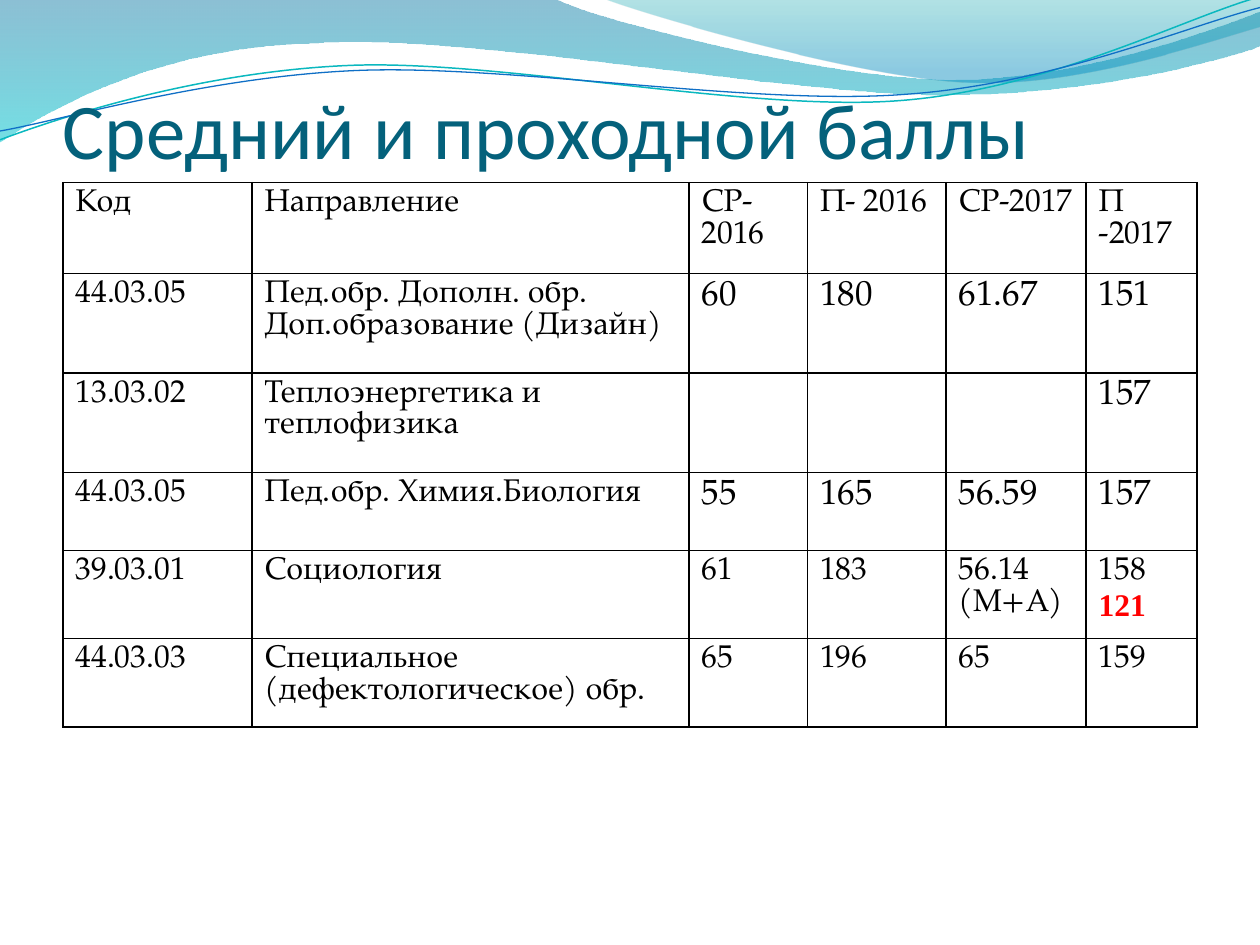
from lxml.etree import SubElement
from pptx import Presentation
from pptx.dml.color import RGBColor
from pptx.enum.text import MSO_ANCHOR
from pptx.oxml.ns import qn
from pptx.util import Inches, Pt

BLACK = RGBColor(0x00, 0x00, 0x00)
RED = RGBColor(0xFF, 0x00, 0x00)
TITLE_TEAL = RGBColor(0x04, 0x61, 0x7B)
DEEP_BLUE = RGBColor(0x00, 0x74, 0xA1)
AQUA = RGBColor(0x00, 0xC6, 0xCF)
SEA_GREEN = RGBColor(0x00, 0xA1, 0xA9)
SKY_BLUE = RGBColor(0x00, 0x8B, 0xBF)
LINE_TEAL = RGBColor(0x0A, 0xB8, 0xBF)
LINE_BLUE = RGBColor(0x0F, 0x6F, 0xC6)

TITLE = "Средний и проходной баллы"
TITLE_FONT, TABLE_FONT, ACCENT_FONT = "Calibri", "TeX Gyre Pagella", "Times New Roman"
HIGHLIGHT = "121"

ROWS = [
    ["Код", "Направление", "СР- 2016", "П- 2016", "СР-2017", "П -2017"],
    ["44.03.05", "Пед.обр. Дополн. обр. Доп.образование (Дизайн)", "60", "180", "61.67", "151"],
    ["13.03.02", "Теплоэнергетика и теплофизика", "", "", "", "157"],
    ["44.03.05", "Пед.обр. Химия.Биология", "55", "165", "56.59", "157"],
    ["39.03.01", "Социология", "61", "183", "56.14\n(М+А)", "158\n" + HIGHLIGHT],
    ["44.03.03", "Специальное (дефектологическое) обр.", "65", "196", "65", "159"],
]
COLUMN_WIDTHS = [1.5, 3.47, 0.94, 1.1, 1.11, 0.88]
ROW_HEIGHTS = [0.72, 0.79, 0.79, 0.62, 0.63, 0.61]
LARGE_SCORE_ROWS = range(1, 4)

BANDS = [
    ([(0, 0), (4.4, -0.01), (4.76, 0.17, 6.64, 0.63, 7.58, 0.63),
      (8.53, 0.63, 9.58, 0.26, 10, 0.09), (10.01, 0.36),
      (9.83, 0.44, 8.7, 0.76, 7.46, 0.75), (6.22, 0.75, 3.82, 0.28, 2.57, 0.34),
      (1.29, 0.36, 0.46, 0.83, -0.01, 1.13)],
     [(0, DEEP_BLUE, 45), (1, AQUA, 55)]),
    ([(4.79, -0.01), (5.09, 0.11, 6.82, 0.62, 7.69, 0.65),
      (8.56, 0.69, 9.61, 0.32, 10, 0.21), (10, 0)],
     [(0, SEA_GREEN, 30), (0.8, SKY_BLUE, 45)]),
]
WAVES = [
    ([(0, 1.11), (0.48, 0.93, 1.58, 0.57, 2.77, 0.52),
      (3.95, 0.47, 5.93, 0.89, 7.13, 0.8), (8.33, 0.71, 9.38, 0.15, 9.98, -0.02)],
     LINE_TEAL, 0.85),
    ([(0, 1.04), (0.47, 0.96, 1.64, 0.61, 2.83, 0.56),
      (4.03, 0.51, 5.97, 0.84, 7.17, 0.75), (8.36, 0.67, 9.41, 0.21, 10, 0.06)],
     LINE_BLUE, 0.75),
]


def add_outline(slide, segments, close):
    points = [(Inches(segment[i]), Inches(segment[i + 1]))
              for segment in segments for i in range(0, len(segment), 2)]
    builder = slide.shapes.build_freeform(*points[0])
    builder.add_line_segments(points[1:], close=close)
    shape = builder.convert_to_shape()
    shape.shadow.inherit = False
    bend_curves(shape, segments)
    return shape


def bend_curves(shape, segments):
    steps = iter(list(shape._element.spPr.iter(qn("a:lnTo"))))
    for segment in segments[1:]:
        first = next(steps)
        if len(segment) == 6:
            first.tag = qn("a:cubicBezTo")
            for _ in range(2):
                step = next(steps)
                first.append(step[0])
                step.getparent().remove(step)


def add_band(slide, segments, stops):
    shape = add_outline(slide, segments, True)
    shape.line.fill.background()
    shape.fill.gradient()
    shape.fill.gradient_angle = 270
    for stop, (position, color, _) in zip(shape.fill.gradient_stops, stops):
        stop.position = position
        stop.color.rgb = color
    colors = list(shape._element.spPr.iter(qn("a:srgbClr")))
    for element, (_, _, opacity) in zip(colors, stops):
        SubElement(element, qn("a:alpha"), val=str(opacity * 1000))


def add_wave(slide, segments, color, width):
    shape = add_outline(slide, segments, False)
    shape.fill.background()
    shape.line.color.rgb = color
    shape.line.width = Pt(width)


def add_run(paragraph, text, font, size, color, bold=False):
    run = paragraph.add_run()
    run.text = text
    run.font.name = font
    run.font.size = Pt(size)
    run.font.color.rgb = color
    run.font.bold = bold


def add_title(slide):
    box = slide.shapes.add_textbox(Inches(0.5), Inches(0.6), Inches(9), Inches(0.79))
    frame = box.text_frame
    frame.word_wrap = True
    frame.vertical_anchor = MSO_ANCHOR.BOTTOM
    frame.margin_left = frame.margin_right = frame.margin_bottom = 0
    add_run(frame.paragraphs[0], TITLE, TITLE_FONT, 45, TITLE_TEAL)


def add_borders(cell):
    properties = cell._tc.get_or_add_tcPr()
    for index, side in enumerate(("a:lnL", "a:lnR", "a:lnT", "a:lnB")):
        line = properties.makeelement(qn(side), {"w": str(Pt(1))})
        fill = SubElement(line, qn("a:solidFill"))
        SubElement(fill, qn("a:srgbClr"), val=str(BLACK))
        properties.insert(index, line)


def fill_cell(cell, text, size):
    cell.fill.background()
    add_borders(cell)
    frame = cell.text_frame
    for index, line in enumerate(text.split("\n")):
        paragraph = frame.add_paragraph() if index else frame.paragraphs[0]
        if line == HIGHLIGHT:
            add_run(paragraph, line, ACCENT_FONT, size, RED, True)
        elif line:
            add_run(paragraph, line, TABLE_FONT, size, BLACK)


def add_score_table(slide):
    table = slide.shapes.add_table(
        len(ROWS), len(COLUMN_WIDTHS), Inches(0.5), Inches(1.45),
        Inches(sum(COLUMN_WIDTHS)), Inches(sum(ROW_HEIGHTS))).table
    table.first_row = table.horz_banding = False
    for column, width in zip(table.columns, COLUMN_WIDTHS):
        column.width = Inches(width)
    for row, height in zip(table.rows, ROW_HEIGHTS):
        row.height = Inches(height)
    for r, texts in enumerate(ROWS):
        for c, text in enumerate(texts):
            size = 20 if r in LARGE_SCORE_ROWS and c >= 2 else 18
            fill_cell(table.cell(r, c), text, size)


def main():
    presentation = Presentation()
    presentation.slide_width, presentation.slide_height = Inches(10), Inches(7.5)
    slide = presentation.slides.add_slide(presentation.slide_layouts[6])
    for band in BANDS:
        add_band(slide, *band)
    for wave in WAVES:
        add_wave(slide, *wave)
    add_title(slide)
    add_score_table(slide)
    presentation.save("out.pptx")


if __name__ == "__main__":
    main()
